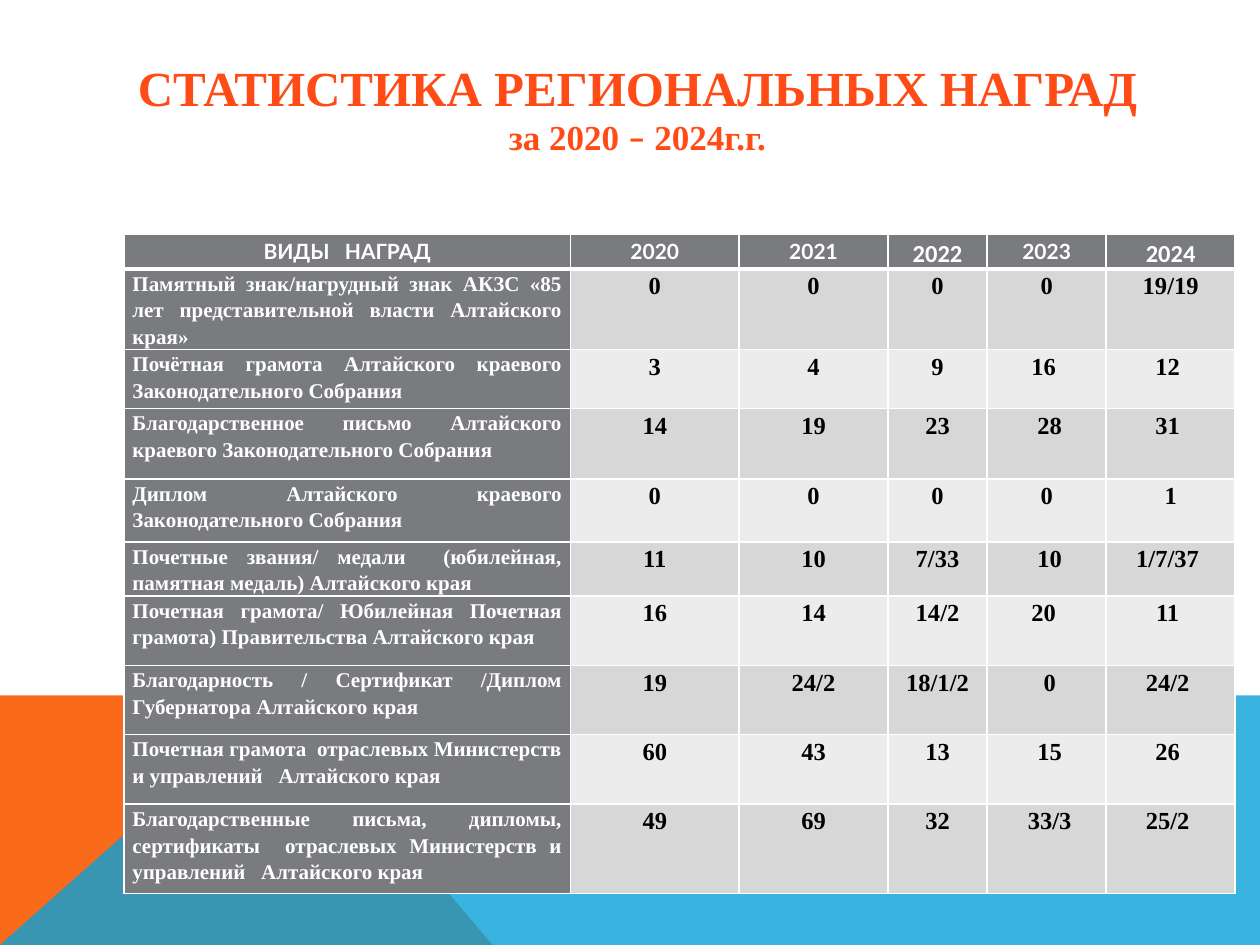
from lxml import etree
from pptx import Presentation
from pptx import util as u
from pptx.dml.color import RGBColor
from pptx.enum import text
from pptx.oxml.ns import qn

SERIF = "Times New Roman"
WHITE, BLACK, GREY, ACCENT = "FFFFFF", "000000", "797B7E", "FF4C16"
BANDS = ("D7D7D8", "ECECEC")
SLIDE_WIDTH, SLIDE_HEIGHT = 25.4, 19.05

TITLE = "СТАТИСТИКА РЕГИОНАЛЬНЫХ НАГРАД"
SUBTITLE = [("за 2020 ", SERIF), ("–", "Calibri"), (" 2024г.г.", SERIF)]

HEADER = ["ВИДЫ   НАГРАД", "2020", "2021", "2022", "2023", "2024"]
LARGER_YEARS = ("2022", "2024")
AWARDS = [
    ("Памятный знак/нагрудный знак АКЗС «85 лет представительной власти Алтайского края»",
     "0", "0", "0", "0", "19/19"),
    ("Почётная грамота Алтайского краевого Законодательного Собрания",
     "3", "4", "9", "16 ", "12 "),
    ("Благодарственное письмо Алтайского краевого Законодательного Собрания",
     "14", "19", "23", " 28", "31 "),
    ("Диплом Алтайского краевого Законодательного Собрания",
     "0", "0", "0", "0", "1"),
    ("Почетные звания/ медали  (юбилейная, памятная медаль) Алтайского края",
     "11", "10", "7/33", " 10", "1/7/37 "),
    ("Почетная грамота/ Юбилейная Почетная грамота) Правительства Алтайского края",
     "16", "14", "14/2", "20 ", "11 "),
    ("Благодарность / Сертификат /Диплом Губернатора Алтайского края",
     "19", "24/2", "18/1/2", " 0", "24/2 "),
    ("Почетная грамота  отраслевых Министерств и управлений   Алтайского края",
     "60", "43", "13", " 15", "26 "),
    ("Благодарственные письма, дипломы, сертификаты  отраслевых Министерств "
     "и управлений   Алтайского края",
     "49", "69", "32", " 33/3", "25/2 "),
]
COLUMN_WIDTHS = [9, 3.4, 3, 2, 2.4, 2.6]
ROW_HEIGHTS = [0.67, 1.62, 1.19, 1.42, 1.27, 1.09, 1.4, 1.4, 1.4, 1.8]
TABLE_LEFT, TABLE_TOP = 2.5, 4.73

BAND_TOP, PEAK = 14.02, 5.66
ORANGE_WEDGE = [(0, SLIDE_HEIGHT), (0, BAND_TOP), (PEAK, BAND_TOP), (9.93, SLIDE_HEIGHT)]
BLUE_BAND = [(0, SLIDE_HEIGHT), (PEAK, BAND_TOP), (SLIDE_WIDTH, BAND_TOP),
             (SLIDE_WIDTH, SLIDE_HEIGHT)]


def rgb(value):
    return RGBColor.from_string(value)


def style_font(font, name, size, color):
    font.name, font.size, font.bold = name, u.Pt(size), True
    font.color.rgb = rgb(color)


def add_polygon(slide, points, color, opacity=100):
    corners = [(u.Cm(x), u.Cm(y)) for x, y in points]
    builder = slide.shapes.build_freeform(*corners[0])
    builder.add_line_segments(corners[1:], close=True)
    shape = builder.convert_to_shape()
    shape.shadow.inherit = False
    shape.fill.solid()
    shape.fill.fore_color.rgb = rgb(color)
    shape.line.fill.background()
    if opacity < 100:
        fill = shape.fill._xPr.find(qn("a:solidFill"))
        etree.SubElement(fill[0], qn("a:alpha"), val=str(opacity * 1000))


def add_title(slide):
    box = slide.shapes.add_textbox(u.Cm(1.4), u.Cm(0.97), u.Cm(22.9), u.Cm(3.07))
    frame = box.text_frame
    frame.word_wrap = True
    frame.margin_top = u.Cm(0.18)
    heading, period = frame.paragraphs[0], frame.add_paragraph()
    heading.text = TITLE
    style_font(heading.font, SERIF, 28, ACCENT)
    for words, font_name in SUBTITLE:
        run = period.add_run()
        run.text = words
        style_font(run.font, font_name, 20, ACCENT)
    for paragraph in frame.paragraphs:
        paragraph.alignment = text.PP_ALIGN.CENTER


def set_borders(cell, widths):
    """Draw white borders; widths are points for left, right, top, bottom."""
    properties = cell._tc.get_or_add_tcPr()
    for index, (side, width) in enumerate(zip("LRTB", widths)):
        line = etree.Element(qn(f"a:ln{side}"), w=str(u.Pt(width)))
        fill = etree.SubElement(line, qn("a:solidFill"))
        etree.SubElement(fill, qn("a:srgbClr"), val=WHITE)
        properties.insert(index, line)


def fill_cell(cell, words, font, background, alignment, borders):
    cell.margin_left = cell.margin_right = u.Cm(0.17)
    cell.margin_top = cell.margin_bottom = 0
    cell.fill.solid()
    cell.fill.fore_color.rgb = rgb(background)
    set_borders(cell, borders)
    paragraph = cell.text_frame.paragraphs[0]
    paragraph.text = words
    paragraph.alignment = alignment
    paragraph.line_spacing = 1.15
    style_font(paragraph.font, *font)


def add_awards_table(slide):
    rows = [HEADER, *AWARDS]
    table = slide.shapes.add_table(
        len(rows), len(HEADER), u.Cm(TABLE_LEFT), u.Cm(TABLE_TOP),
        u.Cm(sum(COLUMN_WIDTHS)), u.Cm(sum(ROW_HEIGHTS))).table
    for column, width in zip(table.columns, COLUMN_WIDTHS):
        column.width = u.Cm(width)
    for row, height in zip(table.rows, ROW_HEIGHTS):
        row.height = u.Cm(height)

    for r, row in enumerate(rows):
        borders = (1, 1, 3 if r == 1 else 1, 3 if r == 0 else 1)
        for c, words in enumerate(row):
            alignment, background = text.PP_ALIGN.CENTER, GREY
            if r == 0:
                font = ("Calibri", 14, WHITE) if words in LARGER_YEARS else ("Lato", 12, WHITE)
            elif c == 0:
                font, alignment = (SERIF, 12, WHITE), text.PP_ALIGN.JUSTIFY
            else:
                font, background = (SERIF, 14, BLACK), BANDS[(r - 1) % 2]
            fill_cell(table.cell(r, c), words, font, background, alignment, borders)


def main():
    presentation = Presentation()
    presentation.slide_width = u.Cm(SLIDE_WIDTH)
    presentation.slide_height = u.Cm(SLIDE_HEIGHT)
    slide = presentation.slides.add_slide(presentation.slide_layouts[6])
    add_polygon(slide, ORANGE_WEDGE, "F96A1B")
    add_polygon(slide, BLUE_BAND, "08A1D9", opacity=80)
    add_awards_table(slide)
    add_title(slide)
    presentation.save("out.pptx")


if __name__ == "__main__":
    main()
